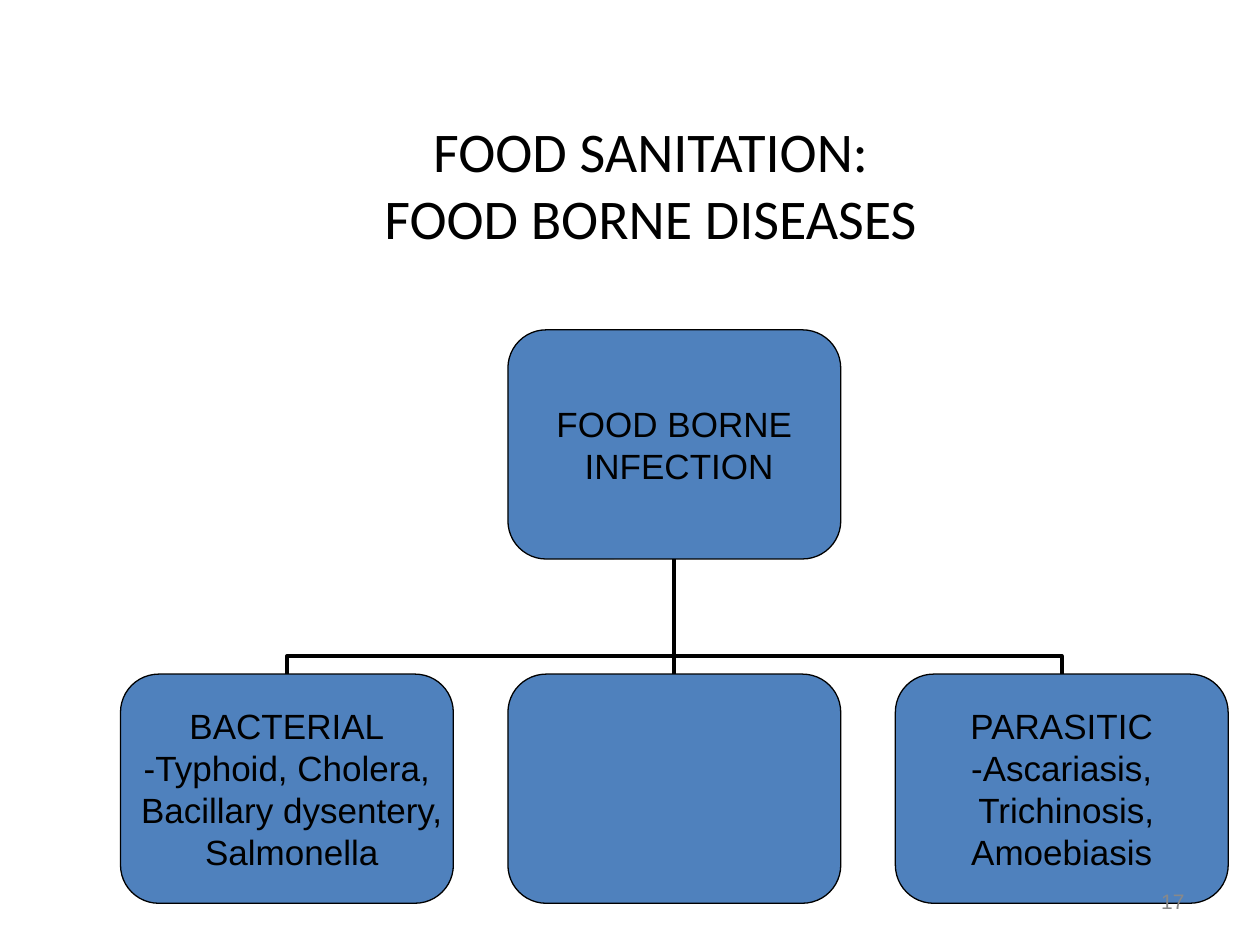
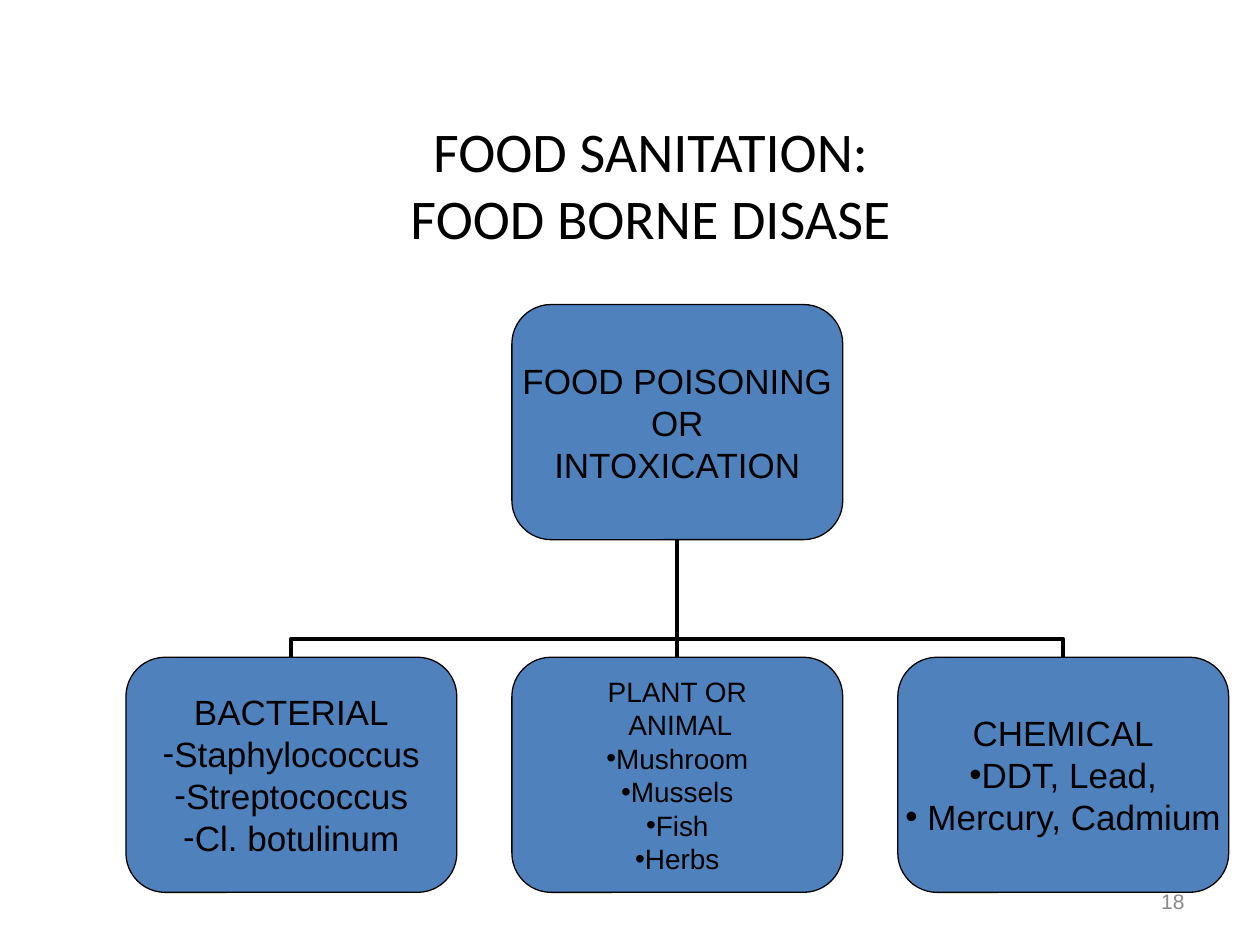
import pptx
import pptx.dml.color
import pptx.enum.shapes
import pptx.enum.text
import pptx.oxml
import pptx.oxml.ns
import pptx.util
from pptx.util import Cm

COLOURS = {"text": "000000", "box": "4F81BD", "line": "000000", "number": "898989"}
ALIGN = pptx.enum.text.PP_ALIGN
CONNECTOR = pptx.enum.shapes.MSO_CONNECTOR
TOP, BOTTOM = 0, 2


def colour(name):
    return pptx.dml.color.RGBColor.from_string(COLOURS[name])


def add_element(parent, tag, **attributes):
    element = pptx.oxml.parse_xml(f"<{tag} {pptx.oxml.ns.nsdecls('a')}/>")
    for key, value in attributes.items():
        element.set(key, value)
    parent.append(element)


class DiseaseDeck:
    """Holds the deck's style and current slide, and draws each kind of element."""

    def __init__(self):
        self.presentation = pptx.Presentation()
        self.presentation.slide_width = Cm(25.4)
        self.presentation.slide_height = Cm(19.05)
        self.slide = None

    def new_slide(self, title_lines):
        self.slide = self.presentation.slides.add_slide(self.presentation.slide_layouts[6])
        self.text_box((2.11, 2.11, 22.02, 3.18), title_lines, 32, "Calibri", "text", ALIGN.CENTER)

    def page_number(self, number):
        self.text_box((18.21, 17.65, 5.92, 1.02), [number], 12, "Arial", "number", ALIGN.RIGHT)

    def run(self, paragraph, text, size, font, colour_name):
        run = paragraph.add_run()
        run.text = text
        run.font.size = pptx.util.Pt(size)
        run.font.name = font
        run.font.color.rgb = colour(colour_name)

    def text_box(self, area, lines, size, font, colour_name, alignment):
        frame = self.slide.shapes.add_textbox(*map(Cm, area)).text_frame
        frame.word_wrap = True
        frame.vertical_anchor = pptx.enum.text.MSO_ANCHOR.MIDDLE
        paragraph = frame.paragraphs[0]
        paragraph.alignment = alignment
        for index, line in enumerate(lines):
            if index:
                paragraph.add_line_break()
            self.run(paragraph, line, size, font, colour_name)

    def bullet(self, paragraph, mark):
        properties = paragraph._p.get_or_add_pPr()
        properties.set("marL", "0")
        properties.set("indent", "0")
        add_element(properties, "a:buFont", typeface="Arial")
        add_element(properties, "a:buChar", char=mark)

    def box(self, area, heading, items=(), mark=None, size=20):
        shape = self.slide.shapes.add_shape(
            pptx.enum.shapes.MSO_SHAPE.ROUNDED_RECTANGLE, *map(Cm, area))
        shape.shadow.inherit = False
        shape.fill.solid()
        shape.fill.fore_color.rgb = colour("box")
        shape.line.color.rgb = colour("line")
        shape.line.width = pptx.util.Pt(0.75)
        frame = shape.text_frame
        frame.word_wrap = False
        frame.vertical_anchor = pptx.enum.text.MSO_ANCHOR.MIDDLE
        frame.margin_left = frame.margin_top = frame.margin_right = frame.margin_bottom = 0
        for index, text in enumerate([*heading, *items]):
            paragraph = frame.add_paragraph() if index else frame.paragraphs[0]
            paragraph.alignment = ALIGN.CENTER
            if index >= len(heading):
                self.bullet(paragraph, mark)
            self.run(paragraph, text, size, "Arial", "text")
        return shape

    def link(self, child, root):
        child_x = child.left + child.width // 2
        root_x = root.left + root.width // 2
        root_bottom = root.top + root.height
        span, drop = abs(child_x - root_x), child.top - root_bottom
        kind = CONNECTOR.ELBOW if span else CONNECTOR.STRAIGHT
        connector = self.slide.shapes.add_connector(kind, child_x, child.top, root_x, root_bottom)
        connector.begin_connect(child, TOP)
        connector.end_connect(root, BOTTOM)
        connector.line.color.rgb = colour("line")
        connector.line.width = pptx.util.Pt(2.25)
        properties = connector._element.spPr
        add_element(properties, "a:effectLst")
        if span:
            self.turn_elbow(connector, properties, child_x > root_x, span, drop)

    def turn_elbow(self, connector, properties, from_right, span, drop):
        middle_x = connector.left + connector.width // 2
        middle_y = connector.top + connector.height // 2
        connector.left, connector.top = middle_x - drop // 2, middle_y - span // 2
        connector.width, connector.height = drop, span
        frame = properties.find(pptx.oxml.ns.qn("a:xfrm"))
        frame.set("rot", str((90 if from_right else 270) * 60000))
        frame.set("flipH", "1" if from_right else "0")
        frame.set("flipV", "0")
        guides = properties.find(pptx.oxml.ns.qn("a:prstGeom")).find(pptx.oxml.ns.qn("a:avLst"))
        add_element(guides, "a:gd", name="adj1", fmla="val 15700")

    def tree(self, left, pitch, size, root_top, child_top, root_lines, children):
        root = self.box((left + pitch, root_top, *size), root_lines)
        for column, child in enumerate(children):
            shape = self.box((left + column * pitch, child_top, *size), **child)
            self.link(shape, root)


def main():
    deck = DiseaseDeck()

    deck.new_slide(["FOOD SANITATION:", "FOOD BORNE DISEASES"])
    deck.tree(2.43, 7.81, (6.71, 4.62), 6.65, 13.59, ["FOOD BORNE", " INFECTION"], [
        {"heading": ["BACTERIAL", "-Typhoid, Cholera,", " Bacillary dysentery,", " Salmonella"]},
        {"heading": []},
        {"heading": ["PARASITIC", "-Ascariasis,", " Trichinosis,", "Amoebiasis"]},
    ])
    deck.page_number("17")

    deck.new_slide(["FOOD SANITATION:", "FOOD BORNE DISASE"])
    deck.tree(2.54, 7.78, (6.67, 4.74), 6.14, 13.25, ["FOOD POISONING", "OR", "INTOXICATION"], [
        {"heading": ["BACTERIAL"], "mark": "-",
         "items": ["Staphylococcus", "Streptococcus", "Cl. botulinum"]},
        {"heading": ["PLANT OR", " ANIMAL"], "mark": "•", "size": 16,
         "items": ["Mushroom", "Mussels", "Fish", "Herbs"]},
        {"heading": ["CHEMICAL"], "mark": "•", "items": ["DDT, Lead,", " Mercury, Cadmium"]},
    ])
    deck.page_number("18")

    deck.presentation.save("out.pptx")


if __name__ == "__main__":
    main()
